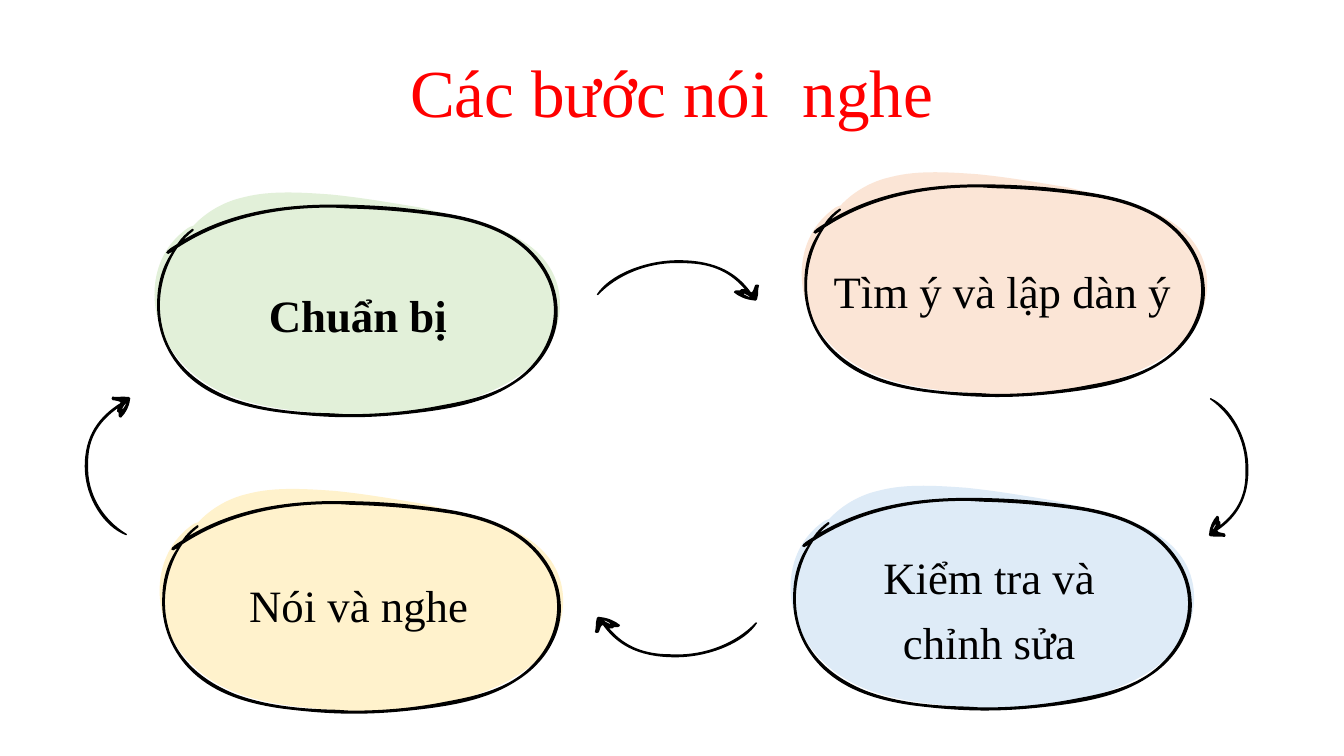
from pptx import Presentation
from pptx.dml.color import RGBColor
from pptx.enum.text import MSO_ANCHOR, PP_ALIGN
from pptx.oxml.ns import qn
from pptx.oxml.xmlchemy import OxmlElement
from pptx.util import Cm, Pt

BLACK = RGBColor(0x00, 0x00, 0x00)
RED = RGBColor(0xFF, 0x00, 0x00)
GREEN = RGBColor(0xE2, 0xF0, 0xD9)
PEACH = RGBColor(0xFB, 0xE5, 0xD6)
BLUE = RGBColor(0xDE, 0xEB, 0xF7)
YELLOW = RGBColor(0xFF, 0xF2, 0xCC)

UNIT = 0.0254  # centimetres per step of the contours below

# A contour is a start point followed by cubic curves: two controls and an end each.
BLOB = [[
    (143, 0),
    (128, 0), (113, 1), (98, 5), (80, 9), (62, 19), (49, 33),
    (47, 34), (45, 34), (44, 35), (0, 65), (2, 127), (34, 165),
    (70, 209), (128, 215), (179, 219), (191, 220), (204, 221), (217, 221),
    (260, 221), (302, 215), (342, 198), (366, 188), (389, 173), (403, 149),
    (415, 127), (417, 98), (403, 75), (391, 55), (371, 44), (350, 35),
    (325, 26), (299, 21), (274, 15), (244, 10), (215, 5), (185, 2),
    (171, 1), (157, 0), (143, 0),
]]
INK_RING = [[
    (185, 15),
    (193, 15), (200, 16), (207, 16), (239, 17), (272, 20), (304, 25),
    (336, 31), (370, 42), (391, 71), (414, 101), (411, 141), (387, 169),
    (364, 197), (329, 205), (296, 211), (266, 217), (235, 220), (203, 220),
    (196, 220), (189, 219), (181, 219), (150, 218), (117, 215), (87, 204),
    (56, 192), (26, 170), (18, 133), (12, 107), (18, 77), (33, 55),
    (79, 25), (132, 15), (185, 15),
], [
    (187, 12),
    (135, 12), (84, 20), (39, 47), (42, 44), (45, 41), (49, 38),
    (50, 37), (49, 36), (48, 36), (42, 40), (37, 45), (33, 51),
    (30, 53), (26, 55), (23, 58), (21, 59), (22, 61), (24, 61),
    (26, 60), (27, 59), (28, 59),
    (18, 73), (13, 91), (13, 110), (12, 140), (26, 168), (48, 186),
    (72, 206), (104, 214), (133, 218), (157, 221), (180, 223), (204, 223),
    (222, 223), (240, 222), (259, 220), (295, 216), (335, 211), (367, 190),
    (393, 174), (414, 144), (410, 110), (407, 78), (384, 52), (358, 39),
    (326, 22), (288, 19), (254, 15), (232, 13), (209, 12), (187, 12),
]]
ARROW = [[
    (146, 0),
    (148, 1), (150, 2), (152, 3), (152, 2), (149, 0), (146, -1),
], [
    (0, 0),
    (12, -19), (47, -34), (81, -34), (120, -34), (140, -20), (153, -2),
    (155, -2), (156, -6), (157, -9), (157, -10), (161, -10), (161, -9),
    (160, -5), (160, -3), (160, 0), (160, 2), (159, 3), (159, 5),
    (158, 6), (157, 7), (156, 6), (147, 5), (141, 2), (136, -2),
    (136, -3), (137, -4), (138, -4), (140, -4), (141, -4), (142, -4),
    (142, -5), (144, -6), (147, -5), (135, -19), (118, -31), (86, -31),
    (50, -33), (19, -18), (2, 0), (2, 1), (0, 1), (0, 0),
]]

# Text, bold, fill, blob (left, top, width), label (left, top, width) in cm
STEPS = [
    ("Chuẩn bị", True, GREEN, (3.63, 4.85, 10.59), (4.78, 7.14, 8.48)),
    ("Tìm ý và lập dàn ý", False, PEACH, (19.94, 4.34, 10.59), (20.32, 6.53, 9.88)),
    ("Kiểm tra và chỉnh sửa", False, BLUE, (19.66, 12.24, 10.54), (20.7, 14.55, 8.46)),
    ("Nói và nghe", False, YELLOW, (3.76, 12.32, 10.54), (4.8, 14.45, 8.48)),
]
# Tail in cm, and the images of the arrow's x and y axes
ARROWS = [
    ((15.04, 7.42), (1, 0), (0, 1)),
    ((30.51, 10.03), (0.03, 0.86), (-1.03, 0.07)),
    ((19.08, 15.7), (-1, 0), (0, -1)),
    ((3.18, 13.49), (-0.02, -0.86), (1.16, -0.1)),
]


def bend_segments(shape):
    """Turn every three line segments of a freeform into one cubic curve."""
    segments = list(shape.element.iter(qn("a:lnTo")))
    for i in range(0, len(segments), 3):
        curve = OxmlElement("a:cubicBezTo")
        segments[i].addprevious(curve)
        for segment in segments[i:i + 3]:
            curve.append(segment[0])
            segment.getparent().remove(segment)


class CyclePage:
    font_name = "Times New Roman"
    inset = Cm(0.33)

    def __init__(self, deck):
        self.page = deck.slides.add_slide(deck.slide_layouts[6])

    def add_outline(self, shapes, contours, origin, color, x_axis=(1, 0), y_axis=(0, 1)):
        """Draw filled contours, with the local axes mapped to the given vectors."""
        builder = None
        for contour in contours:
            points = [
                tuple(Cm(origin[k] + UNIT * (x * x_axis[k] + y * y_axis[k])) for k in (0, 1))
                for x, y in contour]
            if builder is None:
                builder = shapes.build_freeform(*points[0])
            else:
                builder.move_to(*points[0])
            builder.add_line_segments(points[1:], close=True)
        shape = builder.convert_to_shape()
        bend_segments(shape)
        shape.shadow.inherit = False
        shape.fill.solid()
        shape.fill.fore_color.rgb = color
        shape.line.fill.background()

    def add_text(self, shapes, text, place, size, color, spacing, after=0, bold=False):
        box = shapes.add_textbox(*map(Cm, place))
        frame = box.text_frame
        frame.word_wrap = True
        frame.vertical_anchor = MSO_ANCHOR.MIDDLE
        frame.margin_left = frame.margin_right = self.inset
        frame.margin_top = frame.margin_bottom = self.inset
        para = frame.paragraphs[0]
        para.text = text
        para.alignment = PP_ALIGN.CENTER
        para.line_spacing = spacing
        para.space_after = Pt(after)
        para.font.name = self.font_name
        para.font.size = Pt(size)
        para.font.bold = bold
        para.font.color.rgb = color

    def add_title(self, text):
        self.add_text(self.page.shapes, text, (1.04, 1.52, 31.78, 1.78), 48, RED, 0.9)

    def add_arrow(self, tail, x_axis, y_axis):
        self.add_outline(self.page.shapes, ARROW, tail, BLACK, x_axis, y_axis)

    def add_step(self, text, bold, color, blob, label):
        shapes = self.page.shapes.add_group_shape().shapes
        left, top, width = blob
        stretch = (width / (417 * UNIT), 0)
        self.add_outline(shapes, BLOB, (left, top), color, stretch)
        self.add_outline(shapes, INK_RING, (left, top), BLACK, stretch)
        self.add_text(shapes, text, (*label, 1.32), 32, BLACK, 1.2, 10, bold)


def main():
    deck = Presentation()
    deck.slide_width, deck.slide_height = Cm(33.87), Cm(19.05)
    cycle = CyclePage(deck)
    cycle.add_title("Các bước nói  nghe")
    for arrow in ARROWS:
        cycle.add_arrow(*arrow)
    for step in STEPS:
        cycle.add_step(*step)
    deck.save("out.pptx")


if __name__ == "__main__":
    main()
